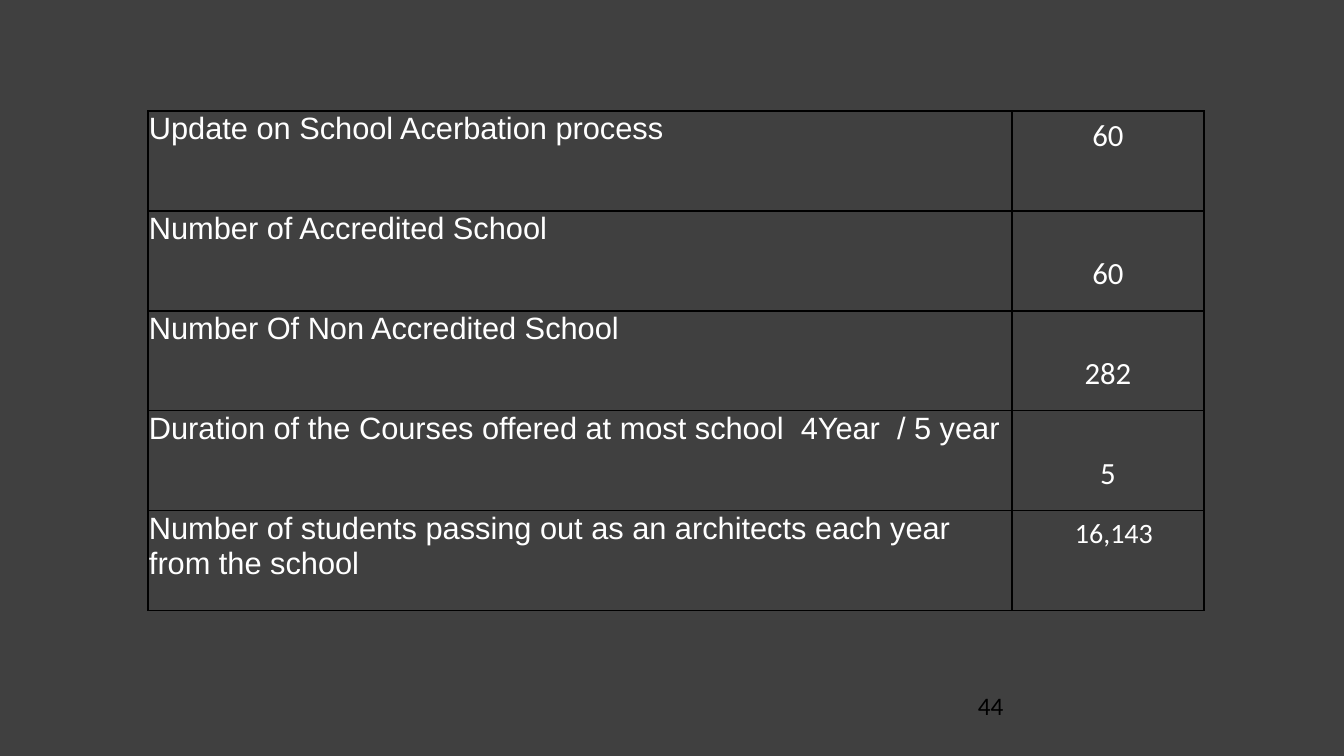
from lxml.etree import SubElement
from pptx import Presentation
from pptx.dml.color import RGBColor
from pptx.enum.shapes import MSO_SHAPE
from pptx.enum.text import PP_ALIGN
from pptx.oxml.ns import qn
from pptx.util import Pt

SCALE = 914400 / 100.8
COLORS = {"backdrop": "404040", "text": "FFFFFF", "border": "000000", "number": "000000"}
COLUMN_WIDTHS = (864, 192)
ROW_HEIGHT = 100
LABEL_MARGINS = (1, 1, 1, 0)
VALUE_MARGINS = (12, 6, 12, 6)
LOWERED_MARGINS = (12, 44, 12, 6)
INDENTED_MARGINS = (63, 6, 12, 6)
CENTER = {"size": 22, "align": PP_ALIGN.CENTER}
ROWS = (
    ("Update on School Acerbation process", "60", VALUE_MARGINS, CENTER),
    ("Number of Accredited School", "60", LOWERED_MARGINS, CENTER),
    ("Number Of Non Accredited School", "282", LOWERED_MARGINS, CENTER),
    ("Duration of the Courses offered at most school  4Year  / 5 year", "5",
     LOWERED_MARGINS, CENTER),
    ("Number of students passing out as an architects each year from the school",
     "16,143", INDENTED_MARGINS, {"size": 20}),
)


def px(length):
    """Convert pixels to EMU."""
    return round(length * SCALE)


def color(name):
    """Look up a named colour."""
    return RGBColor.from_string(COLORS[name])


def write_text(frame, text, font="Calibri", size=22, fill="text", align=PP_ALIGN.LEFT):
    """Write one formatted paragraph into a text frame."""
    frame.word_wrap = True
    paragraph = frame.paragraphs[0]
    paragraph.alignment = align
    run = paragraph.add_run()
    run.text = text
    run.font.name = font
    run.font.size = Pt(size)
    run.font.color.rgb = color(fill)


def add_backdrop(slide, width, height):
    """Cover the slide with a dark rectangle."""
    shape = slide.shapes.add_shape(MSO_SHAPE.RECTANGLE, 0, 0, width, height)
    shape.shadow.inherit = False
    shape.fill.solid()
    shape.fill.fore_color.rgb = color("backdrop")
    shape.line.fill.background()


def add_borders(cell):
    """Draw a thin line on all four sides of a cell."""
    properties = cell._tc.get_or_add_tcPr()
    for index, side in enumerate(("lnL", "lnR", "lnT", "lnB")):
        line = SubElement(properties, qn(f"a:{side}"), w=str(Pt(1)))
        fill = SubElement(line, qn("a:solidFill"))
        SubElement(fill, qn("a:srgbClr"), val=COLORS["border"])
        properties.remove(line)
        properties.insert(index, line)


def fill_cell(cell, text, margins, **text_format):
    """Set the margins, fill, borders and text of a cell."""
    cell.margin_left, cell.margin_top, cell.margin_right, cell.margin_bottom = map(px, margins)
    cell.fill.background()
    add_borders(cell)
    write_text(cell.text_frame, text, **text_format)


def add_school_table(slide):
    """Add the table of school figures."""
    frame = slide.shapes.add_table(
        len(ROWS), len(COLUMN_WIDTHS), px(148), px(111),
        px(sum(COLUMN_WIDTHS)), px(ROW_HEIGHT * len(ROWS)))
    table = frame.table
    table.first_row = False
    table.horz_banding = False
    for column, width in zip(table.columns, COLUMN_WIDTHS):
        column.width = px(width)
    for index, (label, value, margins, value_format) in enumerate(ROWS):
        table.rows[index].height = px(ROW_HEIGHT)
        fill_cell(table.cell(index, 0), label, LABEL_MARGINS, font="Arial")
        fill_cell(table.cell(index, 1), value, margins, **value_format)


def add_slide_number(slide):
    """Add the slide number at the lower right."""
    box = slide.shapes.add_textbox(px(968), px(685), px(313), px(52))
    write_text(box.text_frame, "44", size=18, fill="number")


def main():
    """Build and save the slide."""
    presentation = Presentation()
    presentation.slide_width = px(1344)
    presentation.slide_height = px(756)
    slide = presentation.slides.add_slide(presentation.slide_layouts[6])
    add_backdrop(slide, presentation.slide_width, presentation.slide_height)
    add_school_table(slide)
    add_slide_number(slide)
    presentation.save("out.pptx")


if __name__ == "__main__":
    main()
